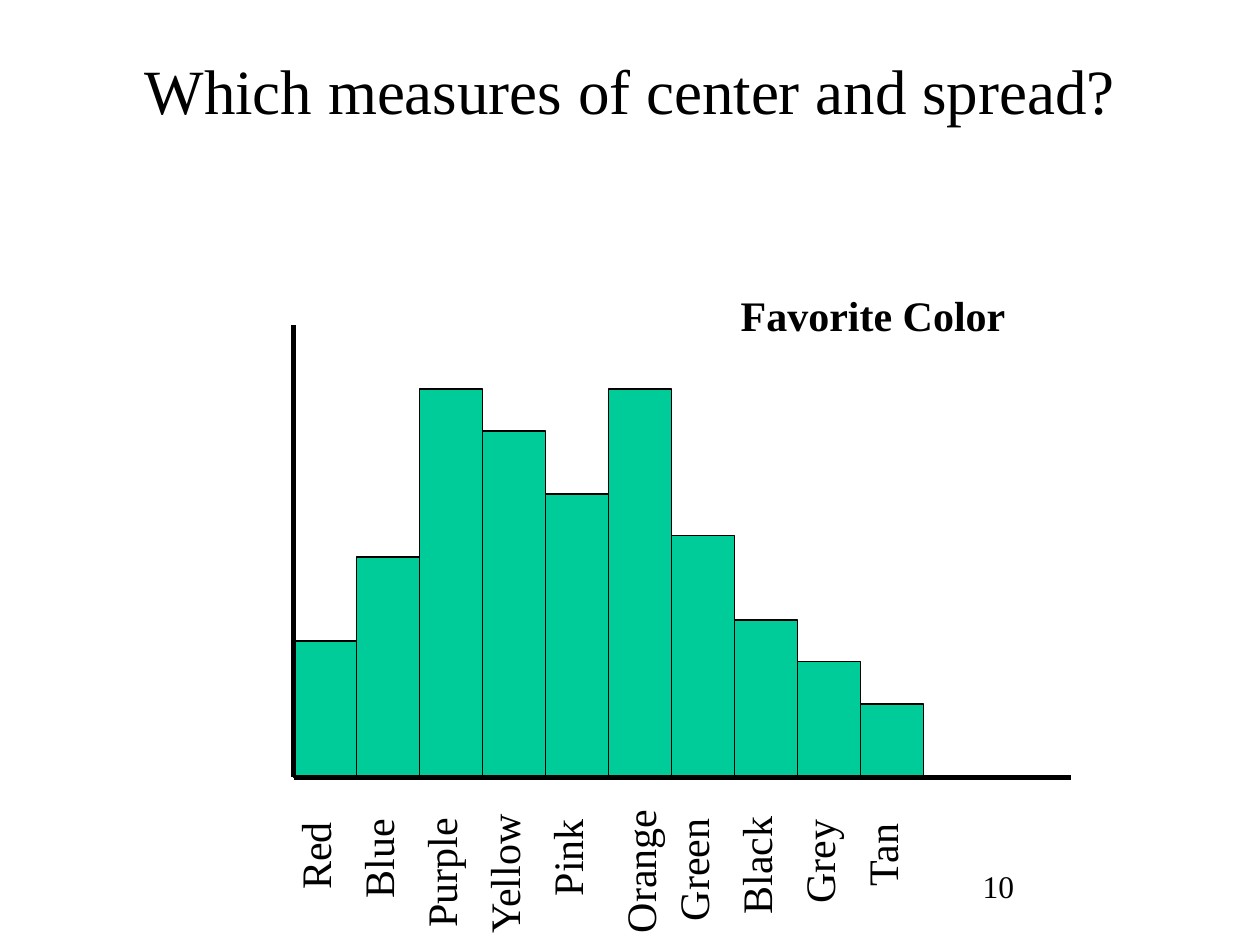
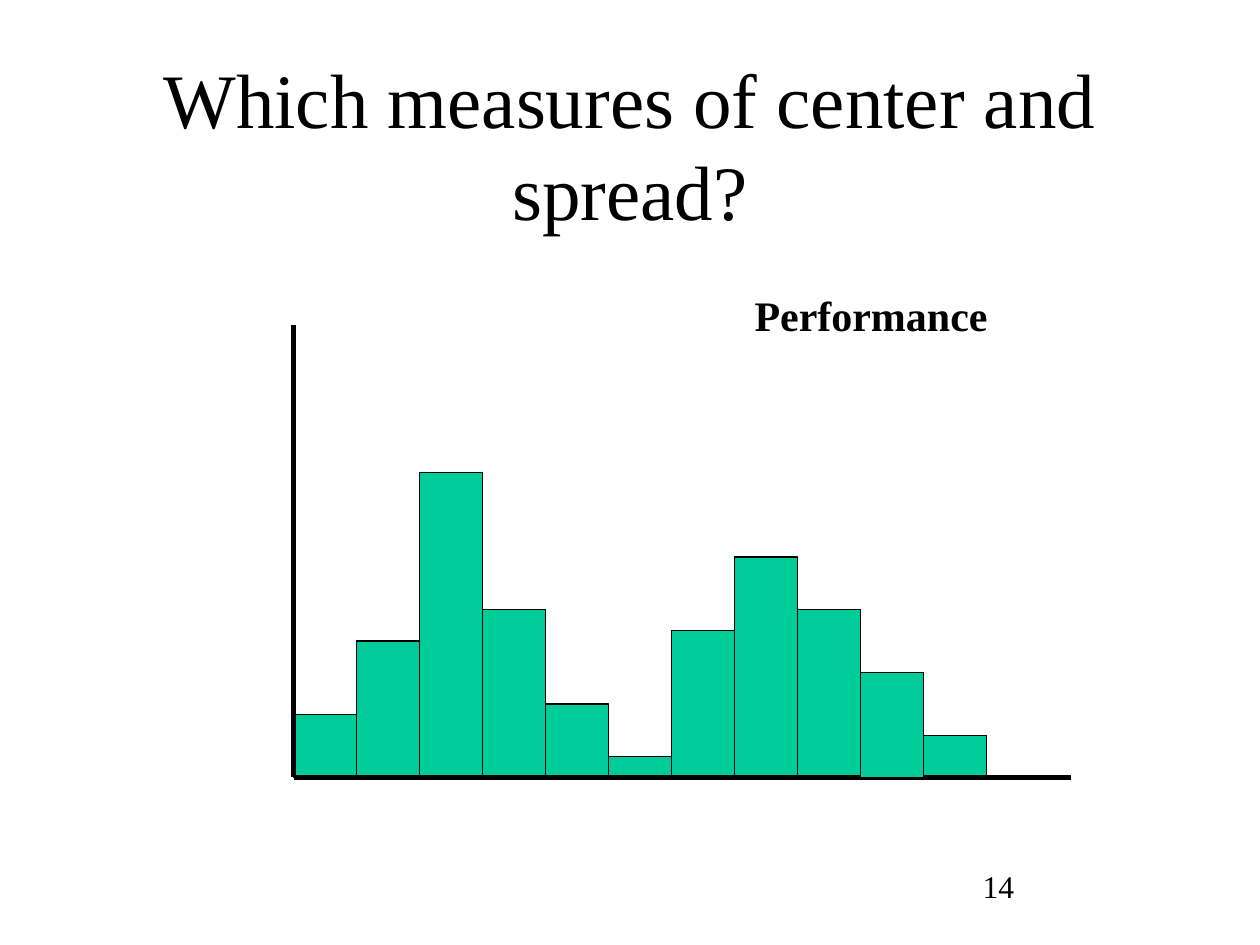
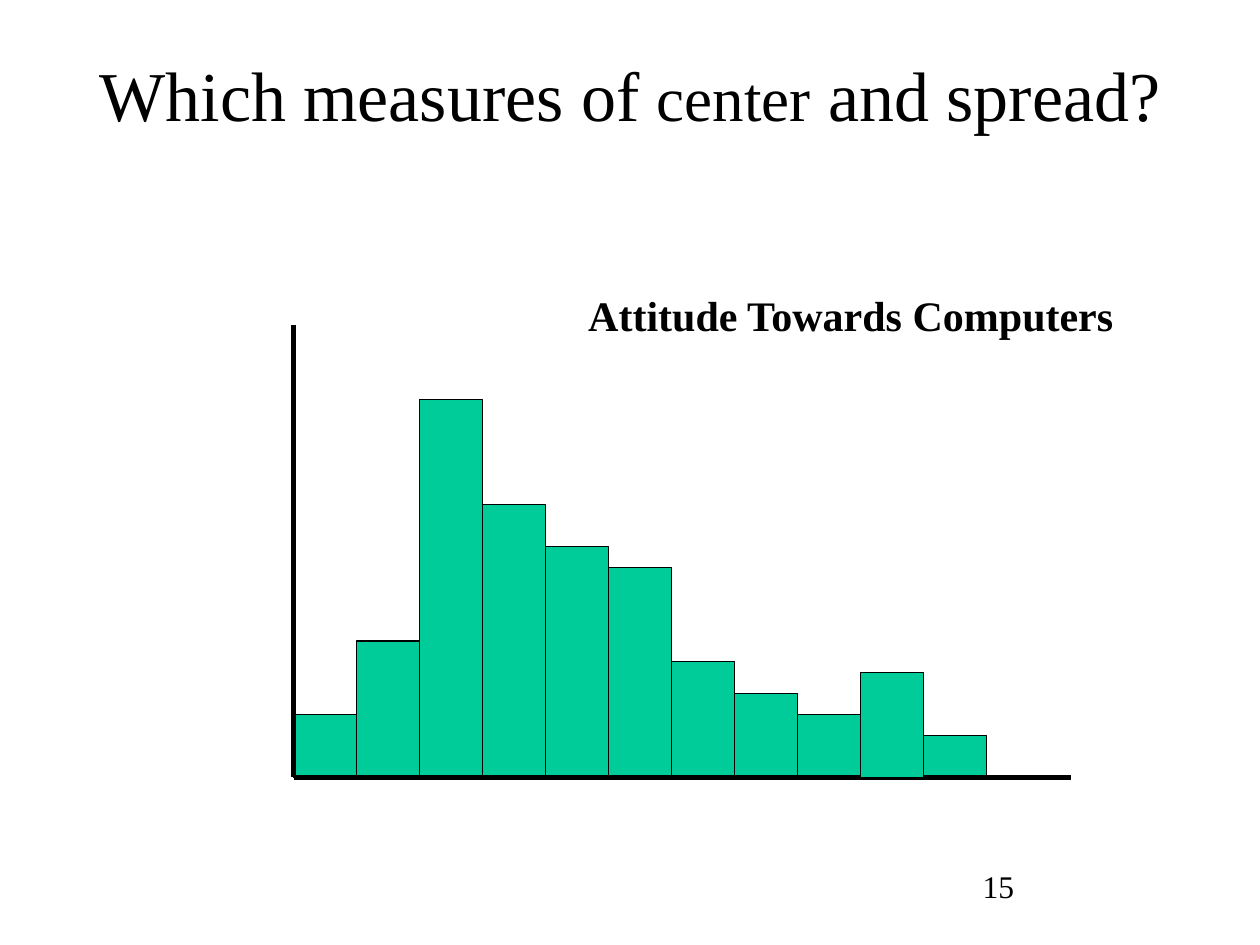
from dataclasses import dataclass
from typing import Any

from lxml.etree import SubElement
from pptx import Presentation
from pptx.dml.color import RGBColor
from pptx.enum.shapes import MSO_CONNECTOR as Conn, MSO_SHAPE as Shape
from pptx.enum.text import MSO_ANCHOR as Anchor, MSO_AUTO_SIZE as AutoSize, PP_ALIGN as Align
from pptx.oxml.ns import qn
from pptx.util import Inches, Pt

COLORS = {"ink": "000000", "bar": "00CC99", "paper": "FFFFFF"}
FONT = "Times New Roman"
TITLE_FRAME = {
    "word_wrap": True,
    "auto_size": AutoSize.NONE,
    "vertical_anchor": Anchor.TOP,
    "margin_top": Inches(0.11),
}
LABEL_FRAME = {"word_wrap": False, "auto_size": AutoSize.SHAPE_TO_FIT_TEXT}
NUMBER_FRAME = {"word_wrap": True, "auto_size": AutoSize.NONE}

AXIS_LEFT, AXIS_RIGHT, AXIS_TOP, BASELINE = 2.33, 8.5, 2.58, 6.17
BAR_WIDTH = 0.5
UNITS_PER_INCH = 12
LABEL_HEIGHT = 0.51


@dataclass(frozen=True)
class Box:
    left: float
    top: float
    width: float
    height: float

    def lengths(self) -> tuple:
        return tuple(Inches(v) for v in (self.left, self.top, self.width, self.height))


@dataclass(frozen=True)
class Run:
    text: str
    size: int


@dataclass(frozen=True)
class Category:
    name: str
    width: float
    center: float
    shift: float = 0


@dataclass(frozen=True)
class Histogram:
    number: int
    title: tuple[Run, ...]
    title_height: float
    caption: str
    caption_left: float
    caption_width: float
    counts: tuple[int, ...]
    categories: tuple[Category, ...] = ()
    front_bar: int | None = None


QUESTION = "Which measures of center and spread?"
HISTOGRAMS = (
    Histogram(
        10, (Run(QUESTION, 36),), 0.87, "Favorite Color", 5.78, 2.32,
        (13, 21, 37, 33, 27, 37, 23, 15, 11, 7),
        (
            Category("Red", 0.74, 6.79),
            Category("Blue", 0.84, 6.81),
            Category("Purple", 1.08, 6.92),
            Category("Yellow", 1.16, 6.93),
            Category("Pink", 0.82, 6.8),
            Category("Orange", 1.19, 6.91, 0.08),
            Category("Green", 1.02, 6.9),
            Category("Black", 0.99, 6.86),
            Category("Grey", 0.88, 6.83),
            Category("Tan", 0.7, 6.78),
        ),
    ),
    Histogram(
        14, (Run(QUESTION, 44),), 1.25, "Performance", 5.89, 2.07,
        (6, 13, 29, 16, 7, 2, 14, 21, 16, 10, 4), front_bar=9,
    ),
    Histogram(
        15, (Run("Which measures of ", 40), Run("center", 36), Run(" and spread?", 40)),
        1.25, "Attitude Towards Computers", 4.57, 4.41,
        (6, 13, 36, 26, 22, 20, 11, 8, 6, 10, 4), front_bar=9,
    ),
)


def color(name: str) -> RGBColor:
    return RGBColor.from_string(COLORS[name])


def apply(target: Any, values: dict[str, Any]) -> None:
    for name, value in values.items():
        setattr(target, name, value)


def write(p: Any, run: Run, bold: bool = False) -> None:
    r = p.add_run()
    r.text = run.text
    apply(r.font, {"name": FONT, "size": Pt(run.size), "bold": bold})
    r.font.color.rgb = color("ink")


def add_title(slide: Any, runs: tuple[Run, ...], height: float) -> None:
    sp = slide.shapes.title
    sp.left, sp.top, sp.width, sp.height = Box(0.5, 0.3, 9, height).lengths()
    tf = sp.text_frame
    apply(tf, TITLE_FRAME)
    p = tf.paragraphs[0]
    p.alignment = Align.CENTER
    for run in runs:
        write(p, run)


def add_text(slide: Any, box: Box, run: Run, frame: dict[str, Any],
             bold: bool = False, rotation: float = 0) -> None:
    sp = slide.shapes.add_textbox(*box.lengths())
    sp.rotation = rotation
    apply(sp.text_frame, frame)
    write(sp.text_frame.paragraphs[0], run, bold)


def add_bar(slide: Any, index: int, count: int) -> None:
    height = count / UNITS_PER_INCH
    box = Box(AXIS_LEFT + index * BAR_WIDTH, BASELINE - height, BAR_WIDTH, height)
    sp = slide.shapes.add_shape(Shape.RECTANGLE, *box.lengths())
    sp.shadow.inherit = False
    sp.fill.solid()
    sp.fill.fore_color.rgb = color("bar")
    sp.line.color.rgb = color("ink")
    sp.line.width = Pt(0.75)


def add_axis(slide: Any, x1: float, y1: float, x2: float, y2: float) -> None:
    ends = (Inches(v) for v in (x1, y1, x2, y2))
    line = slide.shapes.add_connector(Conn.STRAIGHT, *ends)
    line.line.color.rgb = color("ink")
    line.line.width = Pt(3)
    SubElement(line._element.spPr, qn("a:effectLst"))


def add_category(slide: Any, index: int, category: Category) -> None:
    middle = AXIS_LEFT + 0.17 + index * BAR_WIDTH + category.shift
    box = Box(middle - category.width / 2, category.center - LABEL_HEIGHT / 2,
              category.width, LABEL_HEIGHT)
    add_text(slide, box, Run(category.name, 24), LABEL_FRAME, rotation=270)


def add_histogram(prs: Any, item: Histogram) -> None:
    slide = prs.slides.add_slide(prs.slide_layouts[5])
    add_title(slide, item.title, item.title_height)
    add_text(slide, Box(7.7, 6.83, 2.08, 0.5), Run(str(item.number), 18), NUMBER_FRAME)
    for index, count in enumerate(item.counts):
        if index != item.front_bar:
            add_bar(slide, index, count)
    add_axis(slide, AXIS_LEFT, AXIS_TOP, AXIS_LEFT, BASELINE)
    add_axis(slide, AXIS_LEFT, BASELINE, AXIS_RIGHT, BASELINE)
    if item.front_bar is not None:
        add_bar(slide, item.front_bar, item.counts[item.front_bar])
    caption = Box(item.caption_left, 2.25, item.caption_width, LABEL_HEIGHT)
    add_text(slide, caption, Run(item.caption, 24), LABEL_FRAME, bold=True)
    for index, category in enumerate(item.categories):
        add_category(slide, index, category)


def main() -> None:
    prs = Presentation()
    prs.slide_width, prs.slide_height = Inches(10), Inches(7.5)
    fill = prs.slide_master.background.fill
    fill.solid()
    fill.fore_color.rgb = color("paper")
    for item in HISTOGRAMS:
        add_histogram(prs, item)
    prs.save("out.pptx")


if __name__ == "__main__":
    main()
